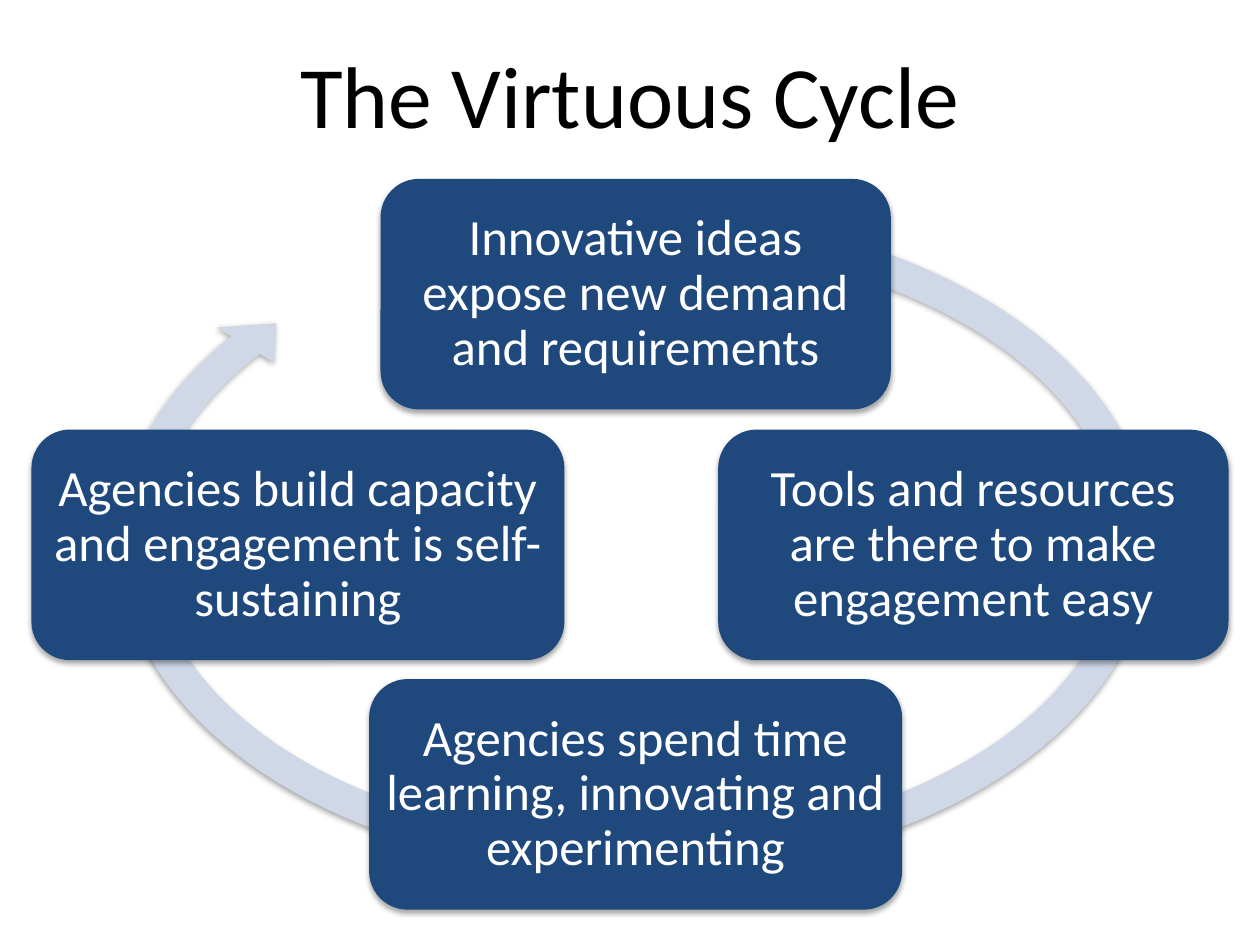
from dataclasses import dataclass

from lxml.etree import SubElement
from pptx import Presentation
from pptx.dml.color import RGBColor
from pptx.enum.shapes import MSO_SHAPE
from pptx.enum.text import MSO_ANCHOR, PP_ALIGN
from pptx.oxml.ns import qn
from pptx.shapes.autoshape import Shape
from pptx.slide import Slide
from pptx.util import Emu, Pt

EMU_PER_PX = 9144
FONT = "Calibri"
NAVY, PALE_BLUE, WHITE, BLACK = "1F497D", "D0D8E8", "FFFFFF", "000000"
STAGE_HEIGHT = 183
STAGE_INSET = 3


@dataclass(frozen=True)
class Box:
    left: int
    top: int
    width: int
    height: int

    def emu(self) -> list[Emu]:
        return [px(side) for side in (self.left, self.top, self.width, self.height)]


@dataclass(frozen=True)
class Stage:
    text: str
    left: int
    top: int
    width: int

    @property
    def box(self) -> Box:
        return Box(self.left, self.top, self.width, STAGE_HEIGHT)


STAGES = [
    Stage("Innovative ideas expose new demand and requirements", 302, 142, 405),
    Stage("Tools and resources are there to make engagement easy", 570, 341, 405),
    Stage("Agencies spend time learning, innovating and experimenting", 293, 539, 423),
    Stage("Agencies build capacity and engagement is self-sustaining", 25, 341, 423),
]


def px(length: int) -> Emu:
    return Emu(length * EMU_PER_PX)


def color(value: str) -> RGBColor:
    return RGBColor.from_string(value)


def add_shadow(shape: Shape) -> None:
    shape.shadow.inherit = False
    effects = shape._element.spPr.find(qn("a:effectLst"))
    shadow = SubElement(effects, qn("a:outerShdw"), blurRad="40000", dist="23000",
                        dir="5400000", rotWithShape="0")
    shade = SubElement(shadow, qn("a:srgbClr"), val=BLACK)
    SubElement(shade, qn("a:alpha"), val="35000")


def add_filled_shape(slide: Slide, kind: MSO_SHAPE, box: Box, fill: str) -> Shape:
    shape = slide.shapes.add_shape(kind, *box.emu())
    shape.fill.solid()
    shape.fill.fore_color.rgb = color(fill)
    shape.line.fill.background()
    add_shadow(shape)
    return shape


def write_centered(shape: Shape, text: str, size: int, font_color: str,
                   line_spacing: float = 1.0) -> None:
    frame = shape.text_frame
    frame.word_wrap = True
    frame.vertical_anchor = MSO_ANCHOR.MIDDLE
    paragraph = frame.paragraphs[0]
    paragraph.alignment = PP_ALIGN.CENTER
    paragraph.line_spacing = line_spacing
    run = paragraph.add_run()
    run.text = text
    run.font.name = FONT
    run.font.size = Pt(size)
    run.font.color.rgb = color(font_color)


def add_title(slide: Slide, text: str) -> None:
    title = slide.shapes.add_textbox(*Box(25, 24, 950, 100).emu())
    write_centered(title, text, 50, BLACK)


def add_cycle_arrow(slide: Slide) -> None:
    arrow = add_filled_shape(slide, MSO_SHAPE.CIRCULAR_ARROW, Box(80, 154, 848, 554), PALE_BLUE)
    thickness, head_width = 4.67 / 100, 4.85 / 100
    head_angle, end_angle, start_angle = (degrees * 0.6 for degrees in (4.55, 206.94, 305.37))
    values = (thickness, head_angle, end_angle, start_angle, head_width)
    for index, value in enumerate(values):
        arrow.adjustments[index] = value


def add_stage(slide: Slide, stage: Stage) -> None:
    shape = add_filled_shape(slide, MSO_SHAPE.ROUNDED_RECTANGLE, stage.box, NAVY)
    frame = shape.text_frame
    frame.margin_left = frame.margin_right = px(STAGE_INSET)
    frame.margin_top = frame.margin_bottom = px(STAGE_INSET)
    write_centered(shape, stage.text, 29, WHITE, line_spacing=0.9)


def main() -> None:
    presentation = Presentation()
    presentation.slide_width, presentation.slide_height = px(1000), px(750)
    slide = presentation.slides.add_slide(presentation.slide_layouts[6])
    add_title(slide, "The Virtuous Cycle")
    add_cycle_arrow(slide)
    for stage in STAGES:
        add_stage(slide, stage)
    presentation.save("out.pptx")


if __name__ == "__main__":
    main()
